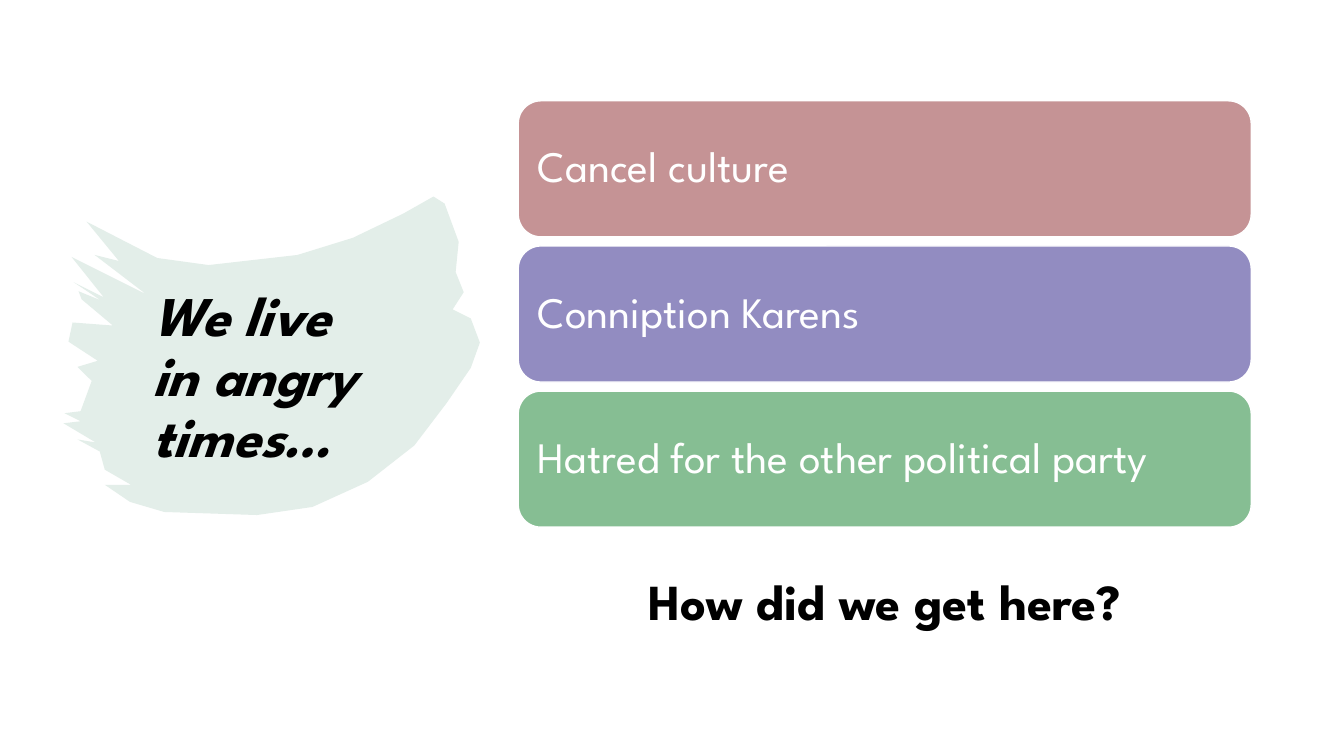
from pptx import Presentation
from pptx.dml.color import RGBColor
from pptx.enum.shapes import MSO_SHAPE
from pptx.enum.text import MSO_ANCHOR, PP_ALIGN
from pptx.util import Inches, Pt

ROUNDED = MSO_SHAPE.ROUNDED_RECTANGLE
MIDDLE = MSO_ANCHOR.MIDDLE
LEFT, CENTER = PP_ALIGN.LEFT, PP_ALIGN.CENTER

FONT = "League Spartan"
WHITE, BLACK, BRUSH = "FFFFFF", "000000", "E3EEE9"
CARDS = [
    ("Cancel culture", "C59395"),
    ("Conniption Karens", "928CC1"),
    ("Hatred for the other political party", "86BE93"),
]
COLUMN_LEFT, COLUMN_WIDTH = 5.14, 7.27
FIRST_ROW, ROW_HEIGHT, ROW_GAP = 1.0, 1.35, 0.09

UNITS_PER_INCH = 100
BRUSH_OUTLINE = [
    (430, 195), (441, 202), (455, 240), (452, 270), (460, 290), (449, 307),
    (467, 316), (476, 340), (467, 365), (443, 400), (411, 442), (365, 478),
    (310, 503), (255, 511), (163, 508), (129, 498), (104, 481), (130, 481),
    (104, 466), (99, 448), (77, 436), (95, 439), (63, 420), (80, 418),
    (64, 410), (80, 408), (91, 378), (77, 364), (97, 358), (68, 339),
    (72, 320), (112, 323), (81, 297), (78, 289), (100, 298), (73, 280),
    (103, 295), (71, 255), (145, 292), (94, 253), (118, 259), (86, 220),
    (156, 256), (207, 263), (295, 253), (350, 236), (400, 212),
]


def color(value):
    return RGBColor.from_string(value)


def add_brush(page, points):
    builder = page.shapes.build_freeform(
        *points[0], scale=Inches(1) / UNITS_PER_INCH)
    builder.add_line_segments(points[1:], close=True)
    brush = builder.convert_to_shape()
    brush.shadow.inherit = False
    brush.fill.solid()
    brush.fill.fore_color.rgb = color(BRUSH)
    brush.line.fill.background()


def write(box, lines, size, ink, align=LEFT, inset=0.1, bold=False, italic=False):
    frame = box.text_frame
    frame.word_wrap = True
    frame.vertical_anchor = MIDDLE
    frame.margin_left = frame.margin_right = Inches(inset)
    para = frame.paragraphs[0]
    para.alignment = align
    para.line_spacing = 0.9
    for index, line in enumerate(lines):
        if index:
            para.add_line_break()
        span = para.add_run()
        span.text = line
        span.font.name = FONT
        span.font.size = Pt(size)
        span.font.bold = bold
        span.font.italic = italic
        span.font.color.rgb = color(ink)


def add_text(page, left, top, width, height, lines, size, **style):
    box = page.shapes.add_textbox(
        Inches(left), Inches(top), Inches(width), Inches(height))
    write(box, lines, size, BLACK, bold=True, **style)


def row_top(row):
    return FIRST_ROW + row * (ROW_HEIGHT + ROW_GAP)


def add_card(page, row, label, fill):
    card = page.shapes.add_shape(
        ROUNDED, Inches(COLUMN_LEFT), Inches(row_top(row)),
        Inches(COLUMN_WIDTH), Inches(ROW_HEIGHT))
    card.shadow.inherit = False
    card.fill.solid()
    card.fill.fore_color.rgb = color(fill)
    card.line.color.rgb = color(WHITE)
    card.line.width = Pt(1)
    write(card, [label], 31, WHITE, inset=0.13)


def main():
    deck = Presentation()
    deck.slide_width, deck.slide_height = Inches(13.33), Inches(7.5)
    page = deck.slides.add_slide(deck.slide_layouts[6])
    add_brush(page, BRUSH_OUTLINE)
    add_text(page, 1.41, 2.67, 3.01, 2.17,
             ["We live ", "in angry times…"], 40, italic=True)
    for row, (label, fill) in enumerate(CARDS):
        add_card(page, row, label, fill)
    add_text(page, COLUMN_LEFT, row_top(len(CARDS)), COLUMN_WIDTH, ROW_HEIGHT,
             ["How did we get here?"], 36, align=CENTER)
    deck.save("out.pptx")


if __name__ == "__main__":
    main()
